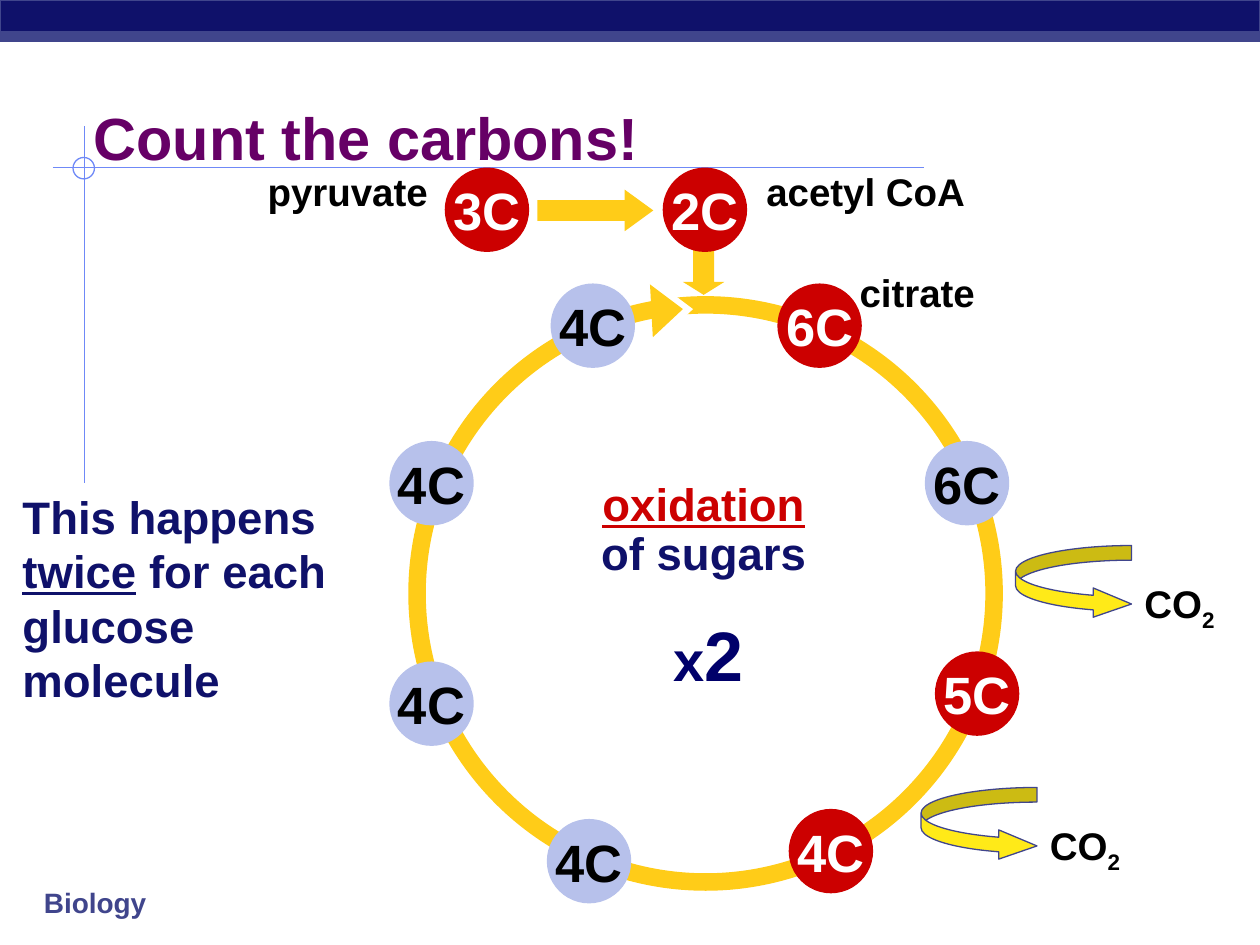
from lxml import etree
from pptx import Presentation
from pptx.dml.color import RGBColor
from pptx.enum.shapes import MSO_CONNECTOR, MSO_SHAPE
from pptx.enum.text import MSO_ANCHOR, MSO_AUTO_SIZE, PP_ALIGN
from pptx.oxml.ns import qn
from pptx.util import Inches, Pt

OVAL, RECT = MSO_SHAPE.OVAL, MSO_SHAPE.RECTANGLE
DOWN, RIGHT = MSO_SHAPE.DOWN_ARROW, MSO_SHAPE.RIGHT_ARROW
CURVED = MSO_SHAPE.CURVED_RIGHT_ARROW
LEFT, CENTER = PP_ALIGN.LEFT, PP_ALIGN.CENTER
TOP, MIDDLE = MSO_ANCHOR.TOP, MSO_ANCHOR.MIDDLE

FONT = "Arial"
COLORS = {
    "navy": "0F116A", "deep": "00006A", "slate": "40458C", "rule": "6F89F7",
    "gold": "FFCC18", "yellow": "FFEA18", "red": "CC0000", "pale": "B7C1EB",
    "purple": "660066", "black": "000000", "white": "FFFFFF",
}
CIRCLE = 0.67

# left, top, label
INTERMEDIATES = [(4.37, 2.25, "4C"), (7.34, 3.5, "6C"), (4.34, 6.5, "4C"),
                 (3.09, 5.25, "4C"), (3.09, 3.5, "4C")]
KEY_STEPS = [(3.53, 1.33, "3C"), (5.26, 1.33, "2C"), (6.17, 2.25, "6C"),
             (7.42, 5.17, "5C"), (6.26, 6.42, "4C")]
CO2_RELEASES = [(8.06, 4.33), (7.31, 6.25)]
# left, top, width, name
MOLECULES = [(6.72, 2.08, 1.12, "citrate"), (5.98, 1.28, 1.78, "acetyl CoA"),
             (2.02, 1.28, 1.48, "pyruvate")]


def rgb(name):
    return RGBColor.from_string(COLORS[name])


def write(tf, text, size=22, color="black", align=CENTER, anchor=MIDDLE,
          wrap=False, spacing=None):
    """Text is a string or a list of (string, format overrides) runs."""
    tf.word_wrap = wrap
    tf.auto_size = MSO_AUTO_SIZE.NONE
    tf.vertical_anchor = anchor
    p = tf.paragraphs[0]
    p.alignment = align
    if spacing:
        p.line_spacing = spacing
    for part, fmt in [(text, {})] if isinstance(text, str) else text:
        if part == "\n":
            p.add_line_break()
            continue
        r = p.add_run()
        r.text = part
        r.font.name = FONT
        r.font.bold = True
        r.font.size = Pt(fmt.get("size", size))
        r.font.color.rgb = rgb(fmt.get("color", color))
        if fmt.get("underline"):
            r.font.underline = True
        if "baseline" in fmt:
            r.font._element.set("baseline", str(fmt["baseline"]))


def add_text(s, x, y, w, h, text, **fmt):
    box = s.shapes.add_textbox(Inches(x), Inches(y), Inches(w), Inches(h))
    write(box.text_frame, text, **fmt)


def add_shape(s, kind, x, y, w, h, fill=None, line=None, width=0.75,
              adj=(), rotation=0):
    sp = s.shapes.add_shape(kind, Inches(x), Inches(y), Inches(w), Inches(h))
    sp.shadow.inherit = False
    sp.rotation = rotation
    for i, value in enumerate(adj):
        sp.adjustments[i] = value
    if fill:
        sp.fill.solid()
        sp.fill.fore_color.rgb = rgb(fill)
    else:
        sp.fill.background()
    if line:
        sp.line.color.rgb = rgb(line)
        sp.line.width = Pt(width)
    else:
        sp.line.fill.background()
    return sp


def add_rule(s, x1, y1, x2, y2):
    line = s.shapes.add_connector(MSO_CONNECTOR.STRAIGHT, Inches(x1), Inches(y1),
                                  Inches(x2), Inches(y2))
    line.line.color.rgb = rgb("rule")
    line.line.width = Pt(1)
    etree.SubElement(line._element.spPr, qn("a:effectLst"))


def add_carbons(s, x, y, label, fill, color):
    sp = add_shape(s, OVAL, x, y, CIRCLE, CIRCLE, fill)
    tf = sp.text_frame
    tf.margin_left = tf.margin_right = tf.margin_top = tf.margin_bottom = 0
    write(tf, label, size=30, color=color)


def add_co2_release(s, x, y):
    add_shape(s, CURVED, x, y, 0.92, 0.58, "yellow", "slate", adj=(0.2, 0.4, 0.524))
    add_text(s, x + 0.91, y + 0.25, 0.78, 0.47,
             [("CO", {}), ("2", {"baseline": -25000})])


def add_frame(s):
    """Top bars, crossed rules and footer."""
    add_rule(s, 0.42, 1.33, 7.33, 1.33)
    add_rule(s, 0.67, 1, 0.67, 3.83)
    add_shape(s, OVAL, 0.58, 1.25, 0.17, 0.17, line="rule")
    add_shape(s, RECT, 0, 0, 10, 0.33, "navy", "slate")
    add_shape(s, RECT, 0, 0.25, 10, 0.08, "slate", "slate")
    add_text(s, 0.25, 6.98, 1.58, 0.37, "Biology", size=16, color="slate",
             align=LEFT, wrap=True)


def add_title(s, text):
    title = s.shapes.title
    title.left, title.top = Inches(0.64), Inches(0.75)
    title.width, title.height = Inches(4.53), Inches(0.67)
    write(title.text_frame, text, size=34, color="purple")


def add_cycle(s):
    add_shape(s, DOWN, 5.42, 1.92, 0.33, 0.42, "gold", adj=(0.5, 0.312))
    add_shape(s, OVAL, 3.31, 2.42, 4.58, 4.58, line="gold", width=10)
    for x, y, label in INTERMEDIATES:
        add_carbons(s, x, y, label, "pale", "black")
    for x, y, label in KEY_STEPS:
        add_carbons(s, x, y, label, "red", "white")
    # The white arrowhead opens a gap in the ring ahead of the gold one.
    for x, fill in [(5.25, "white"), (5.17, "gold")]:
        add_shape(s, RIGHT, x, 2.25, 0.25, 0.42, fill, adj=(0.484, 1), rotation=356.9)
    add_shape(s, DOWN, 4.56, 1.21, 0.33, 0.92, "gold", adj=(0.5, 0.688), rotation=270)


def main():
    prs = Presentation()
    prs.slide_width, prs.slide_height = Inches(10), Inches(7.5)
    s = prs.slides.add_slide(prs.slide_layouts[5])

    add_frame(s)
    add_title(s, "Count the carbons!")
    add_cycle(s)
    for x, y in CO2_RELEASES:
        add_co2_release(s, x, y)
    for x, y, w, name in MOLECULES:
        add_text(s, x, y, w, 0.47, name)

    add_text(s, 5.24, 4.8, 0.76, 0.77, [("x", {}), ("2", {"size": 40})],
             size=32, color="deep")
    add_text(s, 4.67, 3.78, 1.83, 0.88,
             [("oxidation", {"color": "red", "underline": True}), ("\n", {}),
              ("of sugars", {})],
             size=26, color="navy", anchor=TOP, spacing=0.9)
    add_text(s, 0.08, 3.83, 2.92, 1.84,
             [("This happens ", {}), ("twice", {"underline": True}),
              (" for each glucose molecule", {})],
             size=26, color="navy", align=LEFT, anchor=TOP, wrap=True)

    prs.save("out.pptx")


if __name__ == "__main__":
    main()
